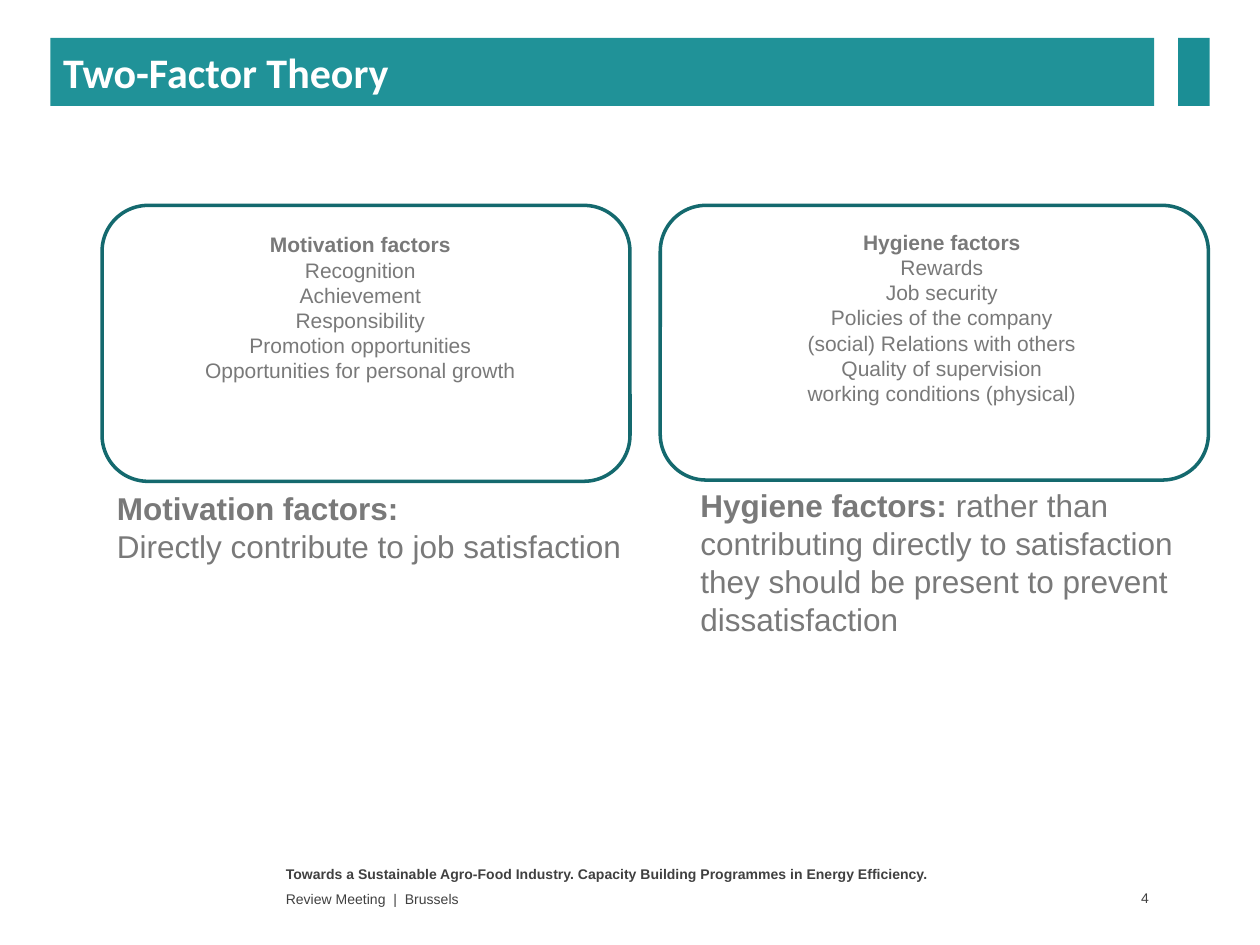
from lxml import etree
from pptx import Presentation
from pptx.dml.color import RGBColor
from pptx.enum.shapes import MSO_SHAPE
from pptx.enum.text import MSO_ANCHOR, MSO_AUTO_SIZE, PP_ALIGN
from pptx.oxml.ns import qn
from pptx.util import Inches, Pt

RECT, ROUNDED = MSO_SHAPE.RECTANGLE, MSO_SHAPE.ROUNDED_RECTANGLE
TOP, MIDDLE = MSO_ANCHOR.TOP, MSO_ANCHOR.MIDDLE
LEFT, CENTER, RIGHT = PP_ALIGN.LEFT, PP_ALIGN.CENTER, PP_ALIGN.RIGHT
FIXED_SIZE = MSO_AUTO_SIZE.NONE

COLORS = {"banner": "209298", "accent": "1B8E95", "outline": "14696E",
          "body": "797979", "footer": "404040", "white": "FFFFFF"}
FORMATS = {
    "title": {"size": Pt(24), "name": "Calibri", "color": "white"},
    "list": {"size": Pt(12), "name": "Arial", "color": "body"},
    "summary": {"size": Pt(18), "name": "Arial", "color": "body"},
    "footer": {"size": Pt(8), "name": "Arial", "color": "footer"},
}
COLUMNS, ROWS = 100, 75  # grid cells of 0.1 inch
TWO_CONTENT_LAYOUT = 3


class FactorSlide:
    def __init__(self, presentation):
        self.width = presentation.slide_width
        self.height = presentation.slide_height
        layout = presentation.slide_layouts[TWO_CONTENT_LAYOUT]
        self.slide = presentation.slides.add_slide(layout)

    def area(self, left, top, width, height):
        """Turn grid columns and rows into slide lengths."""
        across, down = self.width / COLUMNS, self.height / ROWS
        return (round(left * across), round(top * down),
                round(width * across), round(height * down))

    def color(self, fill, name):
        fill.solid()
        fill.fore_color.rgb = RGBColor.from_string(COLORS[name])

    def fill_text(self, frame, paragraphs, style, align=LEFT, anchor=TOP):
        """Each paragraph is a list of (text, bold) runs."""
        settings = {"word_wrap": True, "auto_size": FIXED_SIZE,
                    "vertical_anchor": anchor}
        for key, value in settings.items():
            setattr(frame, key, value)
        for number, runs in enumerate(paragraphs):
            paragraph = frame.add_paragraph() if number else frame.paragraphs[0]
            paragraph.alignment = align
            if number:
                paragraph.space_before = Pt(0)
            properties = paragraph._p.get_or_add_pPr()
            properties.set("marL", "0")
            properties.set("indent", "0")
            etree.SubElement(properties, qn("a:buNone"))
            for text, bold in runs:
                run = paragraph.add_run()
                run.text = text
                run.font.bold = bold
                for key, value in FORMATS[style].items():
                    if key == "color":
                        self.color(run.font.fill, value)
                    else:
                        setattr(run.font, key, value)

    def placeholder(self, index, area, paragraphs, style, fill, **layout):
        holder = self.slide.placeholders[index]
        holder.left, holder.top, holder.width, holder.height = self.area(*area)
        self.color(holder.fill, fill)
        self.fill_text(holder.text_frame, paragraphs, style, **layout)

    def text(self, area, paragraphs, style, **layout):
        box = self.slide.shapes.add_textbox(*self.area(*area))
        self.fill_text(box.text_frame, paragraphs, style, **layout)
        return box

    def shape(self, kind, area, fill=None, line=None):
        shape = self.slide.shapes.add_shape(kind, *self.area(*area))
        shape.shadow.inherit = False
        if fill:
            self.color(shape.fill, fill)
        else:
            shape.fill.background()
        if line:
            self.color(shape.line.fill, line)
            shape.line.width = Pt(2)
        else:
            shape.line.fill.background()


FACTORS = [
    {"frame": (8.1, 16.3, 41.9, 21.9),
     "list": (8.9, 17.9, 39.4, 13.1),
     "summary": (8.3, 38.3, 42.1, 7.1),
     "heading": "Motivation factors",
     "items": ["Recognition", "Achievement", "Responsibility",
               "Promotion opportunities", "Opportunities for personal growth"],
     "meaning": [[("Motivation factors:", True)],
                 [("Directly contribute to job satisfaction", False)]]},
    {"frame": (52.4, 16.3, 43.5, 21.8),
     "list": (54.4, 17.7, 40.7, 15.1),
     "summary": (54.6, 38.1, 41.5, 13.1),
     "heading": "Hygiene factors",
     "items": ["Rewards", "Job security", "Policies of the company",
               "(social) Relations with others", "Quality of supervision",
               "working conditions (physical)"],
     "meaning": [[("Hygiene factors: ", True),
                  ("rather than contributing directly to satisfaction they "
                   "should be present to prevent dissatisfaction", False)]]},
]


def main():
    presentation = Presentation()
    presentation.slide_width, presentation.slide_height = Inches(10), Inches(7.5)
    page = FactorSlide(presentation)

    # Title banner
    page.placeholder(0, (4, 3, 87.6, 5.4), [[("Two-Factor Theory", True)]],
                     "title", "banner", anchor=MIDDLE)
    page.shape(RECT, (93.5, 3, 2.5, 5.4), fill="accent")

    # Framed lists with their meaning below
    for index, factor in enumerate(FACTORS, start=1):
        lines = [[(factor["heading"], True)]]
        lines += [[(item, False)] for item in factor["items"]]
        page.placeholder(index, factor["list"], lines, "list", "white", align=CENTER)
        page.shape(ROUNDED, factor["frame"], line="outline")
        page.text(factor["summary"], factor["meaning"], "summary")

    # Footer
    programme = ("Towards a Sustainable Agro-Food Industry. "
                 "Capacity Building Programmes in Energy Efficiency.")
    page.text((21.7, 68.2, 55, 2.1), [[(programme, True)]], "footer")
    page.text((21.7, 70.4, 55, 1.9), [[("Review Meeting  |  Brussels", False)]],
              "footer", anchor=MIDDLE)
    number = page.text((86, 70.3, 5.6, 2), [[("4", False)]], "footer",
                       align=RIGHT, anchor=MIDDLE)
    number.text_frame.margin_right = Inches(0.04)

    presentation.save("out.pptx")


if __name__ == "__main__":
    main()
